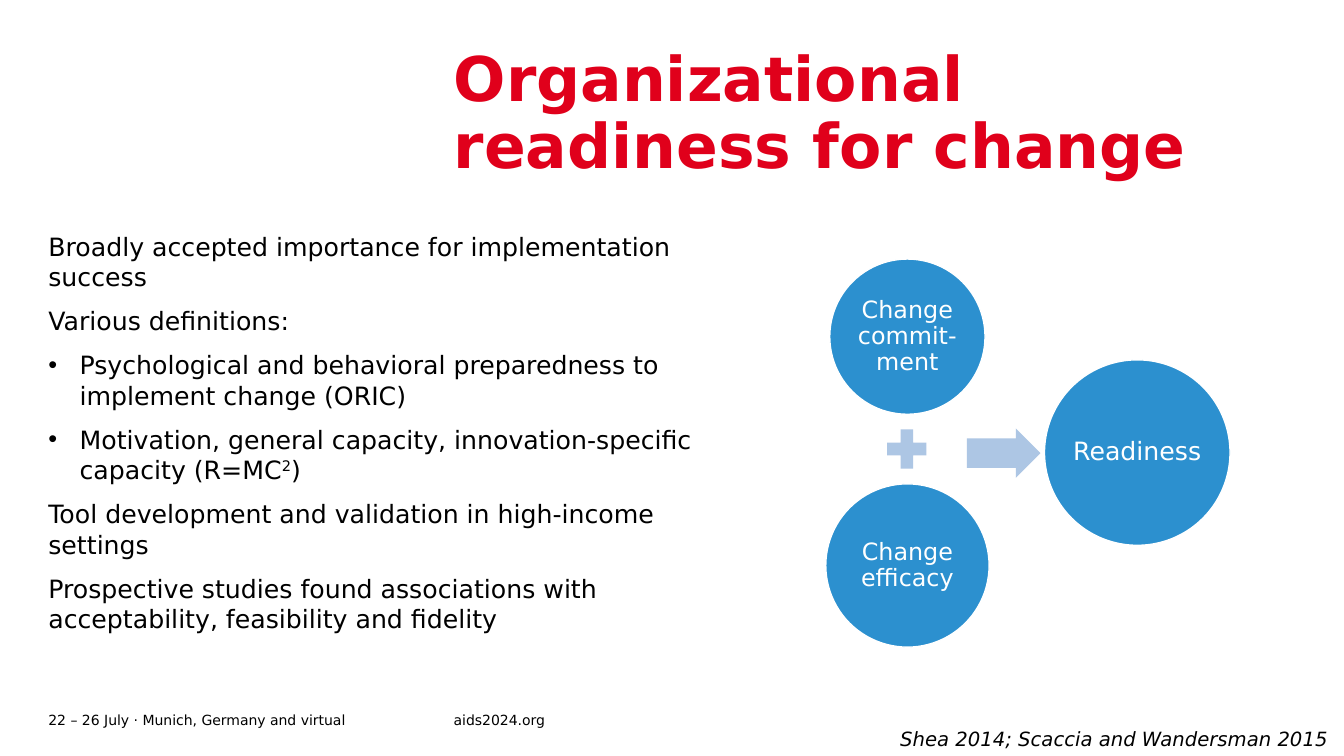
from dataclasses import dataclass

from lxml.etree import SubElement
from pptx import Presentation
from pptx.dml.color import RGBColor
from pptx.enum.shapes import MSO_SHAPE as Preset
from pptx.enum.text import MSO_ANCHOR as Anchor, PP_ALIGN as Align
from pptx.oxml.ns import qn
from pptx.shapes.autoshape import Shape
from pptx.slide import Slide
from pptx.text.text import TextFrame, _Paragraph as Paragraph
from pptx.util import Inches, Pt

FONT = "DejaVu Sans"
RED = RGBColor(0xE0, 0x00, 0x1B)
BLUE = RGBColor(0x2C, 0x90, 0xCF)
PALE_BLUE = RGBColor(0xAD, 0xC6, 0xE4)
BLACK = RGBColor(0, 0, 0)
WHITE = RGBColor(0xFF, 0xFF, 0xFF)
BULLET_INDENT = Inches(0.31)


@dataclass(frozen=True)
class Box:
    left: float
    top: float
    width: float
    height: float

    def lengths(self) -> list[Inches]:
        return [Inches(n) for n in (self.left, self.top, self.width, self.height)]


@dataclass(frozen=True)
class Factor:
    """One circle of the readiness equation."""
    label: str
    left: float
    top: float
    diameter: float
    size: int
    inset: float


@dataclass(frozen=True)
class Point:
    text: str
    bulleted: bool = False
    superscript: str = ""
    ending: str = ""


@dataclass(frozen=True)
class Label:
    text: str
    box: Box
    size: int
    color: RGBColor = BLACK
    bold: bool = False
    italic: bool = False
    anchor: Anchor = Anchor.TOP
    inset: float = 0
    wrap: bool = True
    line_spacing: float = 1.0


LABELS = [
    Label("Organizational readiness for change", Box(4.5, 0.48, 8.35, 1.34), 44,
          RED, bold=True, line_spacing=0.9),
    Label("22 – 26 July · Munich, Germany and virtual", Box(0.48, 7.02, 4.02, 0.24), 10,
          anchor=Anchor.MIDDLE),
    Label("aids2024.org", Box(4.5, 7.02, 1.93, 0.24), 10, anchor=Anchor.MIDDLE),
    Label("Shea 2014; Scaccia and Wandersman 2015", Box(8.83, 7.16, 4.5, 0.34), 14,
          italic=True, inset=0.1, wrap=False),
]

POINTS_BOX = Box(0.48, 2.29, 6.62, 4.49)
POINTS = [
    Point("Broadly accepted importance for implementation success"),
    Point("Various definitions:"),
    Point("Psychological and behavioral preparedness to implement change (ORIC)", True),
    Point("Motivation, general capacity, innovation-specific capacity (R=MC", True, "2", ")"),
    Point("Tool development and validation in high-income settings"),
    Point("Prospective studies found associations with acceptability, feasibility and fidelity"),
]

FACTORS = [
    Factor("Change commit-ment", 8.23, 2.57, 1.54, 17, 0.02),
    Factor("Change efficacy", 8.19, 4.8, 1.62, 17, 0.02),
    Factor("Readiness", 10.36, 3.57, 1.84, 18, 0),
]
PLUS_BOX = Box(8.73, 4.19, 0.53, 0.53)
ARROW_BOX = Box(9.59, 4.25, 0.73, 0.49)


def set_frame(frame: TextFrame, inset: float, anchor: Anchor, wrap: bool = True) -> None:
    frame.margin_left = frame.margin_right = Inches(inset)
    frame.margin_top = frame.margin_bottom = Inches(min(inset, 0.05))
    frame.vertical_anchor = anchor
    frame.word_wrap = wrap


def add_run(paragraph: Paragraph, text: str, size: int, color: RGBColor,
            bold: bool = False, italic: bool = False, raised: bool = False) -> None:
    run = paragraph.add_run()
    run.text = text
    font = run.font
    font.name, font.size, font.bold, font.italic = FONT, Pt(size), bold, italic
    font.color.rgb = color
    if raised:
        run._r.get_or_add_rPr().set("baseline", "30000")


def add_label(slide: Slide, label: Label) -> None:
    frame = slide.shapes.add_textbox(*label.box.lengths()).text_frame
    set_frame(frame, label.inset, label.anchor, label.wrap)
    line = frame.paragraphs[0]
    line.line_spacing = label.line_spacing
    add_run(line, label.text, label.size, label.color, label.bold, label.italic)


def add_bullet(paragraph: Paragraph) -> None:
    properties = paragraph._p.get_or_add_pPr()
    properties.set("marL", str(BULLET_INDENT))
    properties.set("indent", str(-BULLET_INDENT))
    SubElement(properties, qn("a:buFont"), typeface="Arial")
    SubElement(properties, qn("a:buChar"), char="•")


def add_points(slide: Slide, box: Box, points: list[Point]) -> None:
    frame = slide.shapes.add_textbox(*box.lengths()).text_frame
    set_frame(frame, 0, Anchor.TOP)
    for index, point in enumerate(points):
        paragraph = frame.add_paragraph() if index else frame.paragraphs[0]
        if point.bulleted:
            add_bullet(paragraph)
        if index:
            paragraph.space_before = Pt(10)
        add_run(paragraph, point.text, 18, BLACK)
        if point.superscript:
            add_run(paragraph, point.superscript, 18, BLACK, raised=True)
            add_run(paragraph, point.ending, 18, BLACK)


def add_preset(slide: Slide, preset: Preset, box: Box, fill: RGBColor) -> Shape:
    """Add a flat filled shape without an outline."""
    shape = slide.shapes.add_shape(preset, *box.lengths())
    shape.shadow.inherit = False
    shape.fill.solid()
    shape.fill.fore_color.rgb = fill
    shape.line.fill.background()
    return shape


def add_factor(slide: Slide, factor: Factor) -> None:
    box = Box(factor.left, factor.top, factor.diameter, factor.diameter)
    circle = add_preset(slide, Preset.OVAL, box, BLUE)
    circle.line.color.rgb = WHITE
    circle.line.width = Pt(1)
    set_frame(circle.text_frame, factor.inset, Anchor.MIDDLE)
    caption = circle.text_frame.paragraphs[0]
    caption.alignment = Align.CENTER
    caption.line_spacing = 0.9
    add_run(caption, factor.label, factor.size, WHITE)


def main() -> None:
    deck = Presentation()
    deck.slide_width, deck.slide_height = Inches(13.33), Inches(7.5)
    slide = deck.slides.add_slide(deck.slide_layouts[6])
    for label in LABELS:
        add_label(slide, label)
    add_points(slide, POINTS_BOX, POINTS)
    for factor in FACTORS:
        add_factor(slide, factor)
    add_preset(slide, Preset.MATH_PLUS, PLUS_BOX, PALE_BLUE)
    arrow = add_preset(slide, Preset.RIGHT_ARROW, ARROW_BOX, PALE_BLUE)
    arrow.adjustments[0] = 0.6
    arrow.adjustments[1] = 0.5
    deck.save("out.pptx")


if __name__ == "__main__":
    main()
